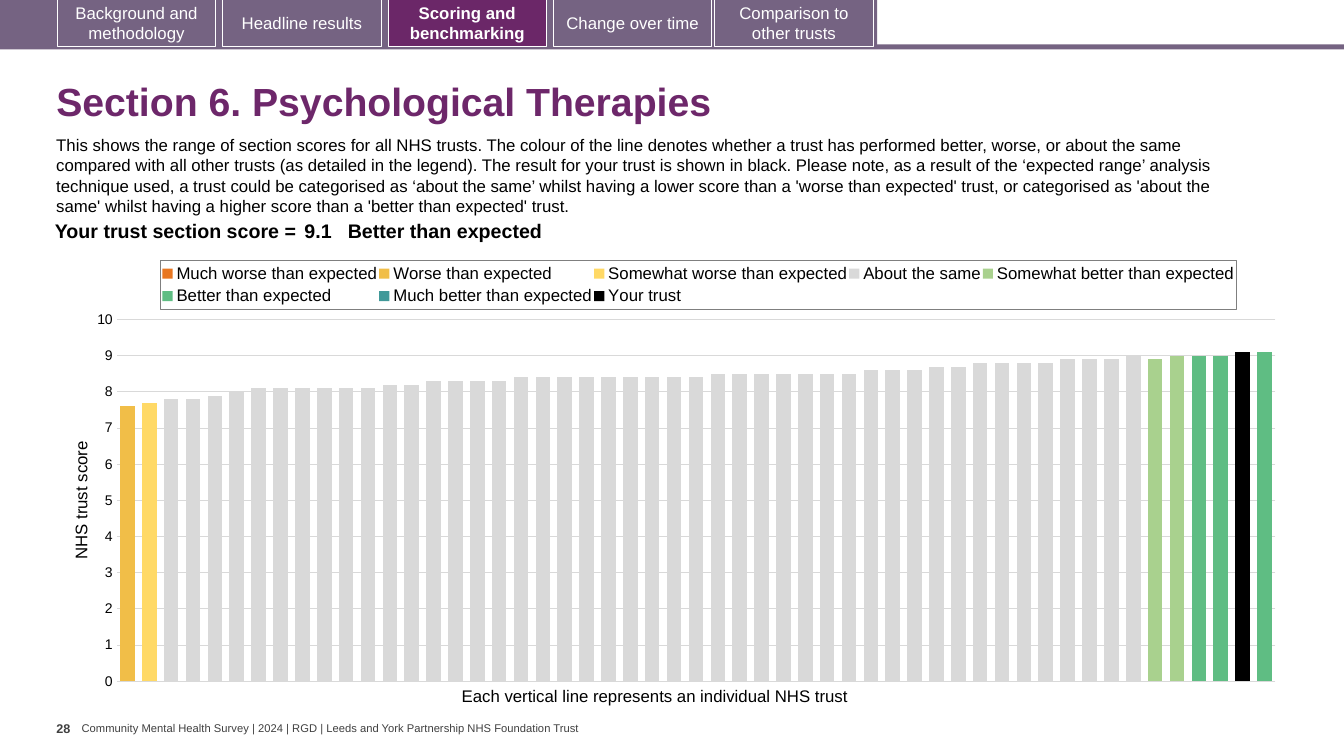
from copy import deepcopy

from pptx import Presentation
from pptx.chart.data import CategoryChartData
from pptx.dml.color import RGBColor
from pptx.enum import chart as charts, shapes, text
from pptx.oxml import parse_xml
from pptx.oxml.ns import nsdecls, qn
from pptx.util import Inches, Pt

COLORS = {
    "band": "756382", "active": "6B2768", "title": "6D276A", "white": "FFFFFF",
    "black": "000000", "footer": "404040", "grid": "D9D9D9", "border": "7F7F7F",
}
TABS = [
    (0.57, "Background and methodology"), (2.21, "Headline results"),
    (3.85, "Scoring and benchmarking"), (5.49, "Change over time"),
    (7.09, "Comparison to other trusts"),
]
ACTIVE_TAB = "Scoring and benchmarking"
INTRO = (
    "This shows the range of section scores for all NHS trusts. The colour of the line denotes "
    "whether a trust has performed better, worse, or about the same compared with all other trusts "
    "(as detailed in the legend). The result for your trust is shown in black. Please note, as a "
    "result of the ‘expected range’ analysis technique used, a trust could be categorised as ‘about "
    "the same’ whilst having a lower score than a 'worse than expected' trust, or categorised as "
    "'about the same' whilst having a higher score than a 'better than expected' trust."
)
ABOUT_THE_SAME = (
    [7.8] * 2 + [7.9, 8] + [8.1] * 6 + [8.2] * 2 + [8.3] * 4 + [8.4] * 9 + [8.5] * 7
    + [8.6] * 3 + [8.7] * 2 + [8.8] * 4 + [8.9] * 3 + [9]
)
# Name, colour, index of the first trust, scores
SERIES = [
    ("Much worse than expected", "E87722", 0, []),
    ("Worse than expected", "F1BE48", 0, [7.6]),
    ("Somewhat worse than expected", "FFD966", 1, [7.7]),
    ("About the same", "D9D9D9", 2, ABOUT_THE_SAME),
    ("Somewhat better than expected", "A9D18E", 47, [8.9, 9]),
    ("Better than expected", "5FBD83", 49, [9, 9, 9.1, 9.1]),
    ("Much better than expected", "419999", 0, []),
    ("Your trust", "000000", 51, [9.1]),
]
TRUST_COUNT = 53


def rgb(name):
    return RGBColor.from_string(COLORS[name])


def set_font(font, size, color="black", bold=False):
    font.name, font.size, font.bold = "Arial", Pt(size), bold
    font.color.rgb = rgb(color)


def add_text(slide, box, content, size, color="black", bold=False, wrap=True, insets=(0.1, 0.05)):
    shape = slide.shapes.add_textbox(*map(Inches, box))
    frame = shape.text_frame
    frame.word_wrap = wrap
    frame.margin_left = frame.margin_right = Inches(insets[0])
    frame.margin_top = frame.margin_bottom = Inches(insets[1])
    frame.text = content
    set_font(frame.paragraphs[0].font, size, color, bold)
    return frame


def add_box(slide, box, fill, line=None):
    shape = slide.shapes.add_shape(shapes.MSO_SHAPE.RECTANGLE, *map(Inches, box))
    shape.shadow.inherit = False
    shape.fill.solid()
    shape.fill.fore_color.rgb = rgb(fill)
    if line:
        shape.line.color.rgb = rgb(line)
        shape.line.width = Pt(0.75)
    else:
        shape.line.fill.background()
    return shape


def add_navigation(slide, width):
    add_box(slide, (0, 0.44, width, 0.05), "band")
    add_box(slide, (0, 0, 8.7, 0.47), "band")
    for left, label in TABS:
        active = label == ACTIVE_TAB
        tab = add_box(slide, (left, -0.01, 1.57, 0.47), "active" if active else "band", "white")
        frame = tab.text_frame
        frame.word_wrap = True
        frame.vertical_anchor = text.MSO_ANCHOR.MIDDLE
        frame.text = label
        paragraph = frame.paragraphs[0]
        paragraph.alignment = text.PP_ALIGN.CENTER
        set_font(paragraph.font, 12, "white", active)


def add_heading(slide, left, top):
    frame = add_text(slide, (left, top, 12.49, 0.72), "Section 6. Psychological Therapies",
                     28, "title", True)
    frame.vertical_anchor = text.MSO_ANCHOR.MIDDLE
    frame.paragraphs[0].line_spacing = 0.9
    add_text(slide, (left, top + 0.62, 12.13, 0.91), INTRO, 12)


def add_score(slide, left, top):
    columns = [("Your trust section score =", 2.63, 0.04), ("9.1", 0.47, 0.04),
               ("Better than expected", 8.59, 0)]
    width = sum(column[1] for column in columns)
    table = slide.shapes.add_table(1, len(columns), *map(Inches, (left, top, width, 0.31))).table
    table.first_row = table.horz_banding = False
    for index, (content, column_width, inset) in enumerate(columns):
        table.columns[index].width = Inches(column_width)
        cell = table.cell(0, index)
        cell.fill.background()
        cell.margin_left = cell.margin_right = Inches(inset)
        cell.margin_top = cell.margin_bottom = Inches(0.04)
        cell.text = content
        set_font(cell.text_frame.paragraphs[0].font, 14, bold=True)
    table.cell(0, 0).text_frame.paragraphs[0].alignment = text.PP_ALIGN.RIGHT


def manual_layout(x, y, width, height, inner=False):
    target = '<c:layoutTarget val="inner"/>' if inner else ""
    return parse_xml(
        f'<c:layout {nsdecls("c")}><c:manualLayout>{target}'
        '<c:xMode val="edge"/><c:yMode val="edge"/>'
        f'<c:x val="{x}"/><c:y val="{y}"/><c:w val="{width}"/><c:h val="{height}"/>'
        '</c:manualLayout></c:layout>')


def move_last_series_to_right_axis(plot_area):
    """Give the last series its own plot, with a hidden pair of axes."""
    bars = plot_area.find(qn("c:barChart"))
    category, value = plot_area.find(qn("c:catAx")), plot_area.find(qn("c:valAx"))
    right_bars, right_category, right_value = map(deepcopy, (bars, category, value))
    bars.remove(bars.findall(qn("c:ser"))[-1])
    for series in right_bars.findall(qn("c:ser"))[:-1]:
        right_bars.remove(series)
    for axis_id, number in zip(right_bars.findall(qn("c:axId")), ("5001", "5002")):
        axis_id.set("val", number)
    for axis, own, other in ((right_category, "5001", "5002"), (right_value, "5002", "5001")):
        axis.find(qn("c:axId")).set("val", own)
        axis.find(qn("c:crossAx")).set("val", other)
    for tag in ("c:majorGridlines", "c:title"):
        right_value.remove(right_value.find(qn(tag)))
    for tag, setting in (("c:axPos", "r"), ("c:majorTickMark", "out"),
                         ("c:tickLblPos", "none"), ("c:crosses", "max")):
        right_value.find(qn(tag)).set("val", setting)
    bars.addnext(right_bars)
    value.addnext(right_value)
    right_value.addnext(right_category)


def add_score_chart(slide, left, top, width, height):
    data = CategoryChartData()
    data.categories = [str(number + 1) for number in range(TRUST_COUNT)]
    for name, _, start, scores in SERIES:
        data.add_series(name, [None] * start + scores + [None] * (TRUST_COUNT - start - len(scores)))
    chart = slide.shapes.add_chart(charts.XL_CHART_TYPE.COLUMN_CLUSTERED,
                                   *map(Inches, (left, top, width, height)), data).chart
    chart.has_title = False
    set_font(chart.font, 10)
    plot = chart.plots[0]
    plot.gap_width, plot.overlap, plot.vary_by_categories = 50, 100, False
    for series, (_, color, _, _) in zip(plot.series, SERIES):
        series.format.fill.solid()
        series.format.fill.fore_color.rgb = RGBColor.from_string(color)

    # Axes
    chart.category_axis.visible = False
    axis = chart.value_axis
    axis.minimum_scale, axis.maximum_scale, axis.major_unit = 0, 10, 1
    axis.major_tick_mark = axis.minor_tick_mark = charts.XL_TICK_MARK.NONE
    axis.format.line.fill.background()
    axis.major_gridlines.format.line.color.rgb = rgb("grid")
    axis.major_gridlines.format.line.width = Pt(0.75)
    axis.tick_labels.number_format, axis.tick_labels.number_format_is_linked = "0", False
    set_font(axis.tick_labels.font, 10)
    title = axis.axis_title
    title.text_frame.text = "NHS trust score"
    set_font(title.text_frame.paragraphs[0].font, 12)
    title._element.find(".//" + qn("a:bodyPr")).set("rot", "-5400000")

    # Legend in a thin frame
    chart.has_legend = True
    legend = chart.legend
    legend.position = charts.XL_LEGEND_POSITION.TOP
    legend.include_in_layout = False
    set_font(legend.font, 12)
    element = legend._element
    for layout in element.findall(qn("c:layout")):
        element.remove(layout)
    element.find(qn("c:legendPos")).addnext(manual_layout(0.076, 0.025, 0.878, 0.111))
    element.find(qn("c:txPr")).addprevious(parse_xml(
        f'<c:spPr {nsdecls("c", "a")}><a:ln w="9525"><a:solidFill>'
        f'<a:srgbClr val="{COLORS["border"]}"/></a:solidFill></a:ln></c:spPr>'))

    plot_area = chart._chartSpace.find(".//" + qn("c:plotArea"))
    for layout in plot_area.findall(qn("c:layout")):
        plot_area.remove(layout)
    plot_area.insert(0, manual_layout(0.04, 0.158, 0.946, 0.808, inner=True))
    move_last_series_to_right_axis(plot_area)
    add_text(slide, (left + 3.81, top + 4.28, 4.11, 0.3),
             "Each vertical line represents an individual NHS trust", 12, wrap=False)


def add_footer(slide, left, top):
    add_text(slide, (left, top, 0.25, 0.4), "28", 9, "footer", True, False, (0, 0.05))
    frame = add_text(slide, (left + 0.25, top + 0.06, 5.01, 0.13),
                     "Community Mental Health Survey | 2024 | RGD | "
                     "Leeds and York Partnership NHS Foundation Trust",
                     8, "footer", wrap=False, insets=(0, 0))
    frame.vertical_anchor = text.MSO_ANCHOR.MIDDLE


def main():
    presentation = Presentation()
    presentation.slide_width, presentation.slide_height = Inches(13.33), Inches(7.5)
    slide = presentation.slides.add_slide(presentation.slide_layouts[6])
    add_navigation(slide, 13.33)
    add_heading(slide, 0.46, 0.67)
    add_score_chart(slide, 0.67, 2.47, 12.15, 4.44)
    add_score(slide, 0.35, 2.15)
    add_footer(slide, 0.56, 7.1)
    presentation.save("out.pptx")


if __name__ == "__main__":
    main()
